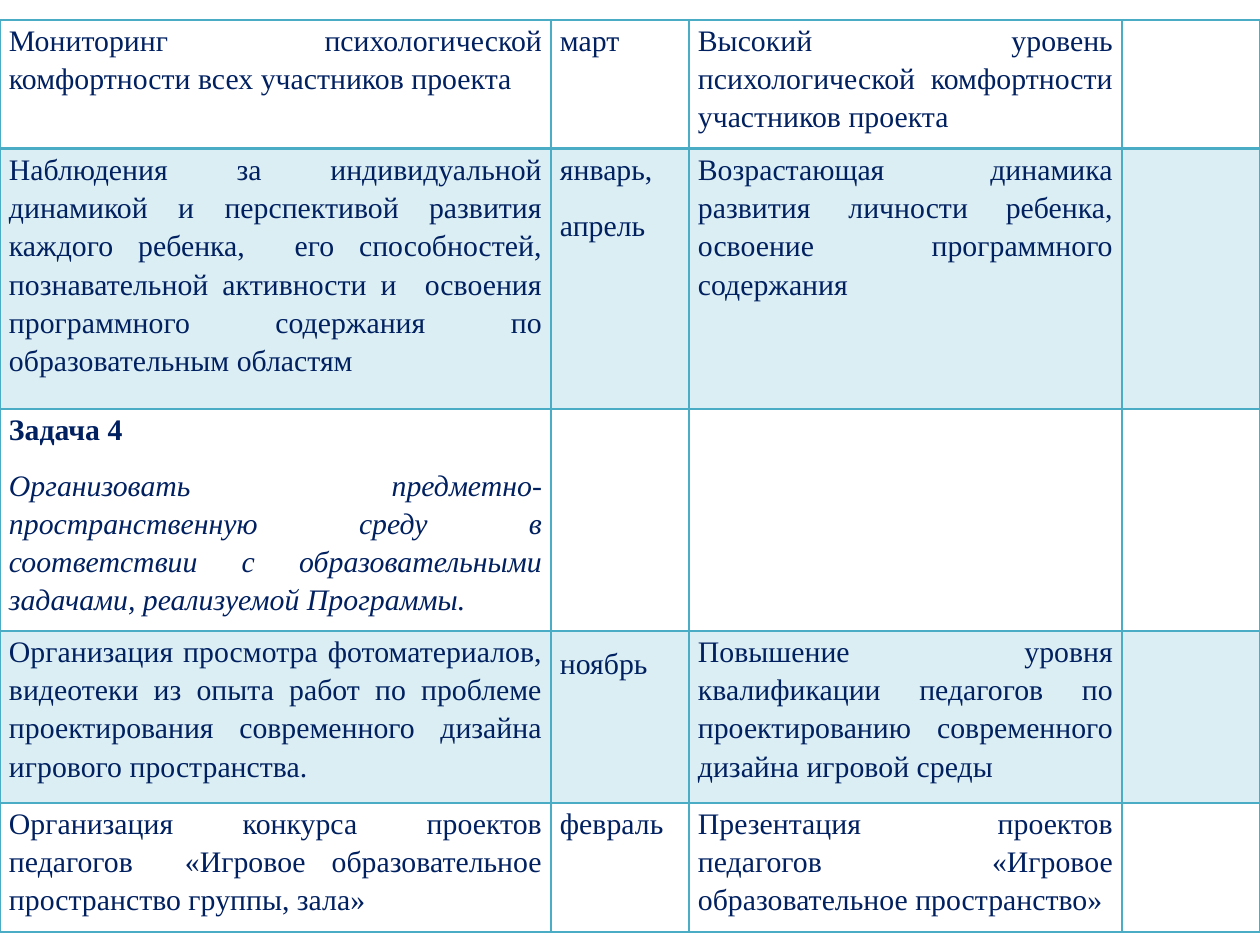
"""Builds a slide with the project activity plan as a table."""
import lxml.etree
import pptx
import pptx.dml.color
import pptx.enum.text
import pptx.oxml.ns
import pptx.util

SCALE = 914400 / 126
NAVY = pptx.dml.color.RGBColor(0x00, 0x20, 0x60)
TEAL = pptx.dml.color.RGBColor(0x4B, 0xAC, 0xC6)
COLUMN_WIDTHS = [551, 138, 433, 138]
ROW_HEIGHTS = [129, 260, 222, 172, 129]
ACTIVITIES = [
    ("Мониторинг психологической комфортности всех участников проекта",
     "март",
     "Высокий уровень психологической комфортности участников проекта", ""),
    ("Наблюдения за индивидуальной динамикой и перспективой развития каждого "
     "ребенка,  его способностей, познавательной активности и  освоения "
     "программного содержания по образовательным областям",
     "январь,\nапрель",
     "Возрастающая динамика развития личности ребенка, освоение "
     "программного содержания", ""),
    ("Задача 4\nОрганизовать предметно-пространственную среду в соответствии "
     "с образовательными задачами, реализуемой Программы.", "", "", ""),
    ("Организация просмотра фотоматериалов, видеотеки из опыта работ по "
     "проблеме проектирования современного дизайна игрового пространства.",
     "ноябрь",
     "Повышение уровня квалификации педагогов по проектированию "
     "современного дизайна игровой среды", ""),
    ("Организация конкурса проектов педагогов  «Игровое образовательное "
     "пространство группы, зала»",
     "февраль",
     "Презентация проектов педагогов «Игровое образовательное пространство»",
     ""),
]


def px(length):
    return pptx.util.Emu(round(length * SCALE))


def add_child(parent, tag, **attributes):
    return lxml.etree.SubElement(parent, pptx.oxml.ns.qn(tag), attributes)


def draw_borders(cell, top=1, bottom=1):
    properties = cell._tc.get_or_add_tcPr()
    widths = {"a:lnL": 1, "a:lnR": 1, "a:lnT": top, "a:lnB": bottom}
    for side, width in widths.items():
        line = add_child(properties, side, w=str(pptx.util.Pt(width)))
        add_child(add_child(line, "a:solidFill"), "a:srgbClr", val=str(TEAL))


def fill_cell(cell, shaded):
    if not shaded:
        cell.fill.background()
        return
    cell.fill.solid()
    cell.fill.fore_color.rgb = TEAL
    tint = cell._tc.tcPr.find(".//" + pptx.oxml.ns.qn("a:solidFill")
                              + "[last()]/" + pptx.oxml.ns.qn("a:srgbClr"))
    for tint in cell._tc.tcPr.findall(
            pptx.oxml.ns.qn("a:solidFill") + "/" + pptx.oxml.ns.qn("a:srgbClr")):
        add_child(tint, "a:alpha", val="20000")


def write_cell(cell, text):
    cell.margin_left = cell.margin_right = px(9)
    cell.margin_top = cell.margin_bottom = 0
    cell.text = text
    for paragraph in cell.text_frame.paragraphs:
        paragraph.alignment = pptx.enum.text.PP_ALIGN.JUSTIFY
        paragraph.line_spacing = 1.15
        paragraph.space_after = pptx.util.Pt(10)
        paragraph.font.name = "Times New Roman"
        paragraph.font.size = pptx.util.Pt(17)
        paragraph.font.bold = False
        paragraph.font.color.rgb = NAVY


def add_plan(slide):
    plan = slide.shapes.add_table(
        len(ROW_HEIGHTS), len(COLUMN_WIDTHS), 0, px(20),
        px(sum(COLUMN_WIDTHS)), px(sum(ROW_HEIGHTS))).table
    plan.first_row = plan.horz_banding = False
    for column, width in zip(plan.columns, COLUMN_WIDTHS):
        column.width = px(width)
    for index, (row, height) in enumerate(zip(plan.rows, ROW_HEIGHTS)):
        row.height = px(height)
        for cell, text in zip(row.cells, ACTIVITIES[index]):
            draw_borders(cell, top=2 if index == 1 else 1,
                         bottom=2 if index == 0 else 1)
            fill_cell(cell, shaded=index % 2 == 1)
            write_cell(cell, text)
    return plan


def emphasise_task(plan):
    heading, goal = plan.cell(2, 0).text_frame.paragraphs
    heading.font.bold = True
    goal.font.italic = True
    goal.space_after = pptx.util.Pt(0)
    plan.cell(3, 1).text_frame.paragraphs[0].line_spacing = 1.5


def main():
    presentation = pptx.Presentation()
    presentation.slide_width = px(1260)
    presentation.slide_height = px(945)
    slide = presentation.slides.add_slide(presentation.slide_layouts[6])
    emphasise_task(add_plan(slide))
    presentation.save("out.pptx")


if __name__ == "__main__":
    main()
